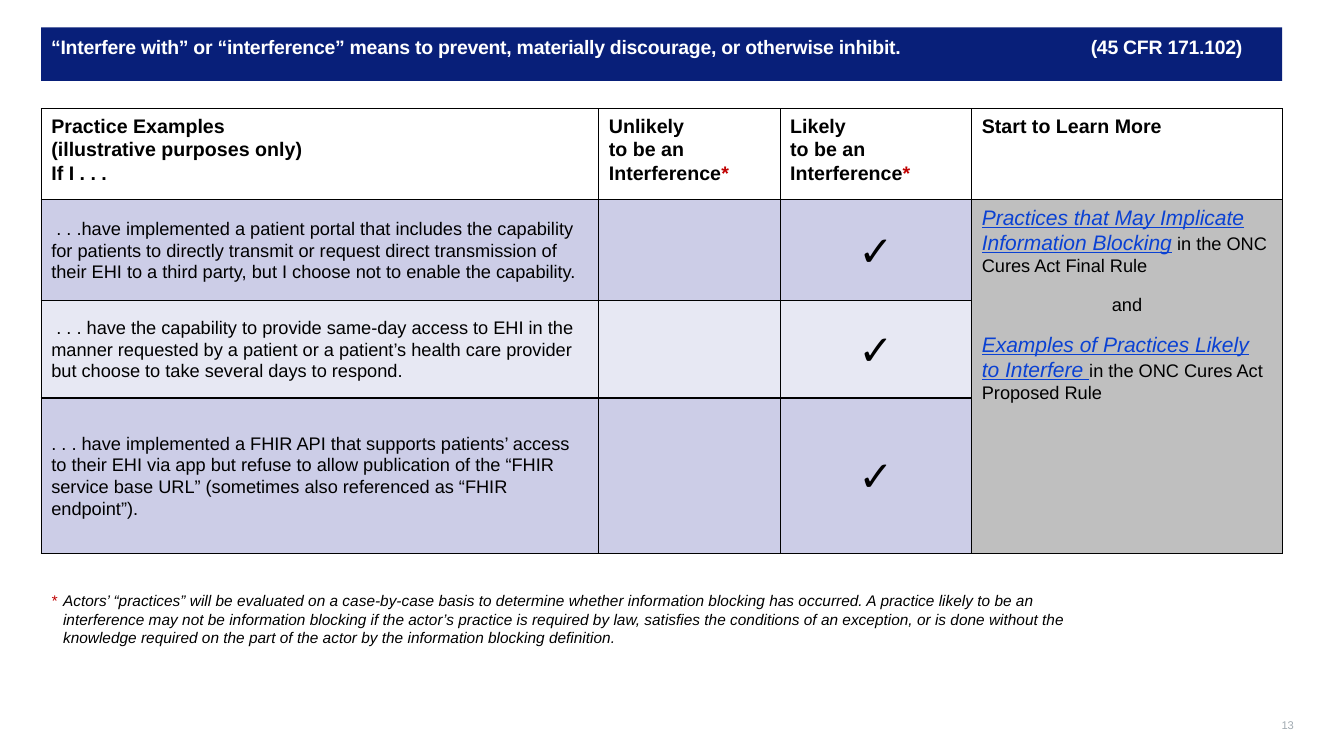
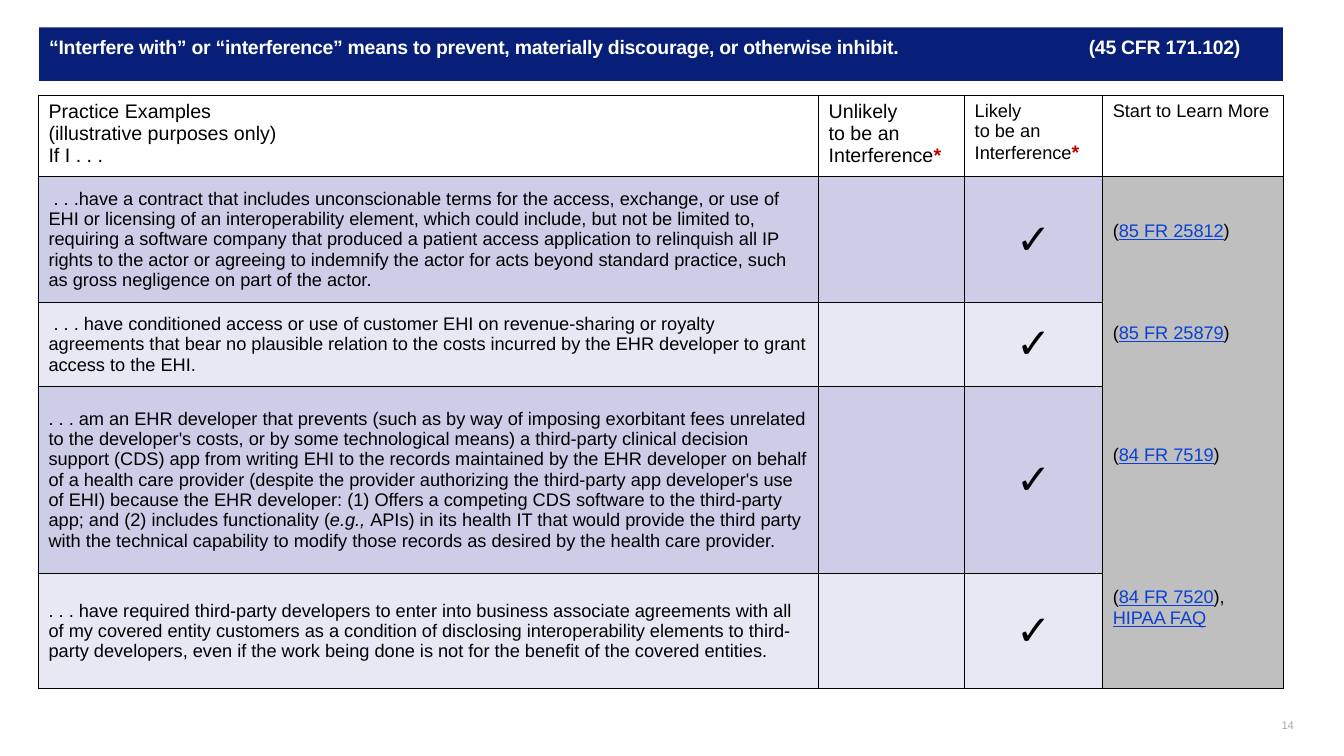
"""Build two slides on which practices may be an interference."""
from lxml.etree import SubElement
from pptx import Presentation
from pptx.dml.color import RGBColor
from pptx.enum.shapes import MSO_SHAPE
from pptx.enum.text import MSO_ANCHOR, PP_ALIGN
from pptx.oxml.ns import qn
from pptx.util import Cm, Pt

NAVY = RGBColor(0x08, 0x1F, 0x79)
WHITE = RGBColor(0xFF, 0xFF, 0xFF)
BLACK = RGBColor(0x00, 0x00, 0x00)
RED = RGBColor(0xC0, 0x00, 0x00)
BLUE = RGBColor(0x0A, 0x41, 0xD3)
LAVENDER = RGBColor(0xCC, 0xCD, 0xE7)
PALE = RGBColor(0xE7, 0xE8, 0xF3)
GRAY = RGBColor(0xBF, 0xBF, 0xBF)
MUTED = RGBColor(0xA1, 0xAA, 0xB1)

BODY = {"name": "Arial", "size": Pt(13), "color": BLACK}
HEAD = {**BODY, "size": Pt(14)}
BOLD_HEAD = {**HEAD, "bold": True}
TITLE = {**BODY, "size": Pt(13.9), "bold": True, "color": WHITE}
NOTE = {**BODY, "size": Pt(11), "italic": True}
NUMBER = {**BODY, "size": Pt(8), "color": MUTED}
CHECK = {**BODY, "size": Pt(30), "bold": True}
STAR = ("*", {"size": Pt(14), "bold": True, "color": RED})
LINK = {"color": BLUE, "underline": True}
BIG_LINK = {**LINK, "size": Pt(15), "italic": True}
CENTERED = {"alignment": PP_ALIGN.CENTER}


class Deck:
    def __init__(self):
        self.presentation = Presentation()
        self.presentation.slide_width = Cm(33.87)
        self.presentation.slide_height = Cm(19.05)
        self.slide = None

    def add_slide(self, number):
        self.slide = self.presentation.slides.add_slide(self.presentation.slide_layouts[6])
        frame = self.add_text_box(31.85, 17.5, 0.76, 0.94)
        frame.margin_left = frame.margin_top = frame.margin_right = frame.margin_bottom = 0
        frame.vertical_anchor = MSO_ANCHOR.BOTTOM
        self.fill_text(frame, [([number], {"alignment": PP_ALIGN.RIGHT})], NUMBER, 0.9)

    def add_text_box(self, left, top, width, height):
        box = self.slide.shapes.add_textbox(Cm(left), Cm(top), Cm(width), Cm(height))
        box.text_frame.word_wrap = True
        return box.text_frame

    def fill_text(self, frame, paragraphs, base, line_spacing=None):
        for index, (runs, layout) in enumerate(paragraphs):
            paragraph = frame.add_paragraph() if index else frame.paragraphs[0]
            for key, value in {"line_spacing": line_spacing, **layout}.items():
                setattr(paragraph, key, value)
            for item in runs:
                text, extra = (item, {}) if isinstance(item, str) else item
                run = paragraph.add_run()
                run.text = text
                for key, value in {**base, **extra}.items():
                    if key == "color":
                        run.font.color.rgb = value
                    else:
                        setattr(run.font, key, value)

    def add_title(self, left, width):
        bar = self.slide.shapes.add_shape(
            MSO_SHAPE.RECTANGLE, Cm(left), Cm(0.69), Cm(width), Cm(1.35))
        bar.shadow.inherit = False
        bar.fill.solid()
        bar.fill.fore_color.rgb = NAVY
        bar.line.fill.background()
        frame = bar.text_frame
        frame.word_wrap = True
        frame.vertical_anchor = MSO_ANCHOR.TOP
        paragraph = frame.paragraphs[0]
        tabs = SubElement(paragraph._p.get_or_add_pPr(), qn("a:tabLst"))
        SubElement(tabs, qn("a:tab"), pos=str(Cm(26.2)), algn="l")
        text = ("“Interfere with” or “interference” means to prevent, materially "
                "discourage, or otherwise inhibit.\t(45 CFR 171.102)")
        self.fill_text(frame, [([text], {"alignment": PP_ALIGN.LEFT})], TITLE, 1.1)
        for run in paragraph.runs:
            run._r.get_or_add_rPr().set("spc", "-20")

    def add_footnote(self, text):
        frame = self.add_text_box(1.04, 14.78, 27.18, 1.68)
        self.fill_text(frame, [([("*\t", {"color": RED}), text], {})], NOTE)
        properties = frame.paragraphs[0]._p.get_or_add_pPr()
        properties.set("marL", str(Cm(0.3)))
        properties.set("indent", str(-Cm(0.3)))

    def style_cell(self, cell, color):
        properties = cell._tc.get_or_add_tcPr()
        for side in ("a:lnL", "a:lnR", "a:lnT", "a:lnB"):
            line = SubElement(properties, qn(side), w=str(Pt(1)))
            fill = SubElement(line, qn("a:solidFill"))
            SubElement(fill, qn("a:srgbClr"), val=str(BLACK))
        cell.fill.solid()
        cell.fill.fore_color.rgb = color

    def add_table(self, left, top, widths, heights, headers, practices, sources,
                  line_spacing=None, source_margin=0.13):
        table = self.slide.shapes.add_table(
            len(heights), len(widths), Cm(left), Cm(top),
            Cm(sum(widths)), Cm(sum(heights))).table
        table.first_row = table.horz_banding = False
        for column, width in zip(table.columns, widths):
            column.width = Cm(width)
        for row, height in zip(table.rows, heights):
            row.height = Cm(height)
        for column, (lines, base) in enumerate(headers):
            cell = table.cell(0, column)
            self.style_cell(cell, WHITE)
            self.fill_text(cell.text_frame, [(runs, {}) for runs in lines], base, line_spacing)
        for index, runs in enumerate(practices, 1):
            shade = LAVENDER if index % 2 else PALE
            for column, color in enumerate((shade, shade, shade, GRAY)):
                cell = table.cell(index, column)
                self.style_cell(cell, color)
                if column < 3:
                    cell.vertical_anchor = MSO_ANCHOR.MIDDLE
            practice, check = (table.cell(index, column).text_frame for column in (0, 2))
            self.fill_text(practice, [(runs, {})], BODY, line_spacing)
            self.fill_text(check, [(["✓"], CENTERED)], CHECK, line_spacing)
        source = table.cell(1, 3)
        source.merge(table.cell(len(practices), 3))
        source.margin_top = Cm(source_margin)
        self.fill_text(source.text_frame, sources, BODY, line_spacing)


EXAMPLES_HEADER = [["Practice Examples"], ["(illustrative purposes only)"], ["If I . . ."]]
UNLIKELY_HEADER = [["Unlikely"], ["to be an"], ["Interference", STAR]]
LIKELY_HEADER = [["Likely"], ["to be an Interference", STAR]]
LEARN_HEADER = [["Start to Learn More"]]
HEADERS = (EXAMPLES_HEADER, UNLIKELY_HEADER, LIKELY_HEADER, LEARN_HEADER)

ACCESS_PRACTICES = [
    [" . . .have implemented a patient portal that includes the capability for patients to "
     "directly transmit or request direct transmission of their EHI to a third party, but I "
     "choose not to enable the capability."],
    [" . . . have the capability to provide same-day access to EHI in the manner requested by "
     "a patient or a patient’s health care provider but choose to take several days to respond."],
    [". . . have implemented a FHIR API that supports patients’ access to their EHI via app but "
     "refuse to allow publication of the “FHIR service base URL” (sometimes also referenced as "
     "“FHIR endpoint”)."],
]
ACCESS_SOURCES = [
    ([("Practices that May Implicate Information Blocking", BIG_LINK),
      " in the ONC Cures Act Final Rule"], {}),
    (["and"], {**CENTERED, "space_before": Pt(12)}),
    ([("Examples of Practices Likely to Interfere ", BIG_LINK),
      "in the ONC Cures Act Proposed Rule"], {"space_before": Pt(12)}),
]
FOOTNOTE = (
    "Actors’ “practices” will be evaluated on a case-by-case basis to determine whether "
    "information blocking has occurred. A practice likely to be an interference may not be "
    "information blocking if the actor’s practice is required by law, satisfies the conditions "
    "of an exception, or is done without the knowledge required on the part of the actor by the "
    "information blocking definition.")

CONTRACT_PRACTICES = [
    [" . . .have a contract that includes unconscionable terms for the access, exchange, or use "
     "of EHI or licensing of an interoperability element, which could include, but not be limited "
     "to, requiring a software company that produced a patient access application to relinquish "
     "all IP rights to the actor or agreeing to indemnify the actor for acts beyond standard "
     "practice, such as gross negligence on part of the actor."],
    [" . . . have conditioned access or use of customer EHI on revenue-sharing or royalty "
     "agreements that bear no plausible relation to the costs incurred by the EHR developer to "
     "grant access to the EHI."],
    [". . . am an EHR developer that prevents (such as by way of imposing exorbitant fees "
     "unrelated to the developer's costs, or by some technological means) a third-party clinical "
     "decision support (CDS) app from writing EHI to the records maintained by the EHR developer "
     "on behalf of a health care provider (despite the provider authorizing the third-party app "
     "developer's use of EHI) because the EHR developer: (1) Offers a competing CDS software to "
     "the third-party app; and (2) includes functionality (",
     ("e.g., ", {"italic": True}),
     "APIs) in its health IT that would provide the third party with the technical capability to "
     "modify those records as desired by the health care provider."],
    [". . . have required third-party developers to enter into business associate agreements "
     "with all of my covered entity customers as a condition of disclosing interoperability "
     "elements to third-party developers, even if the work being done is not for the benefit of "
     "the covered entities."],
]
CONTRACT_SOURCES = [
    (["(", ("85 FR 25812", LINK), ")"], {}),
    (["(", ("85 FR 25879", LINK), ")"], {"space_before": Pt(58)}),
    (["(", ("84 FR 7519", LINK), ")"], {"space_before": Pt(73)}),
    (["(", ("84 FR 7520", LINK), "), ", ("HIPAA FAQ", LINK)], {"space_before": Pt(87)}),
]


def main():
    deck = Deck()

    deck.add_slide("13")
    deck.add_title(1.04, 31.27)
    deck.add_footnote(FOOTNOTE)
    deck.add_table(
        1.04, 2.74, (14.05, 4.57, 4.83, 7.82), (2.29, 2.54, 2.46, 3.91),
        [(lines, BOLD_HEAD) for lines in HEADERS],
        ACCESS_PRACTICES, ACCESS_SOURCES, line_spacing=1.07)

    deck.add_slide("14")
    deck.add_table(
        0.97, 2.41, (19.66, 3.68, 3.48, 4.55), (2.03, 3.18, 2.11, 4.72, 2.9),
        list(zip(HEADERS, (HEAD, HEAD, BODY, BODY))),
        CONTRACT_PRACTICES, CONTRACT_SOURCES, source_margin=1.13)
    deck.add_title(0.99, 31.34)

    deck.presentation.save("out.pptx")


if __name__ == "__main__":
    main()
